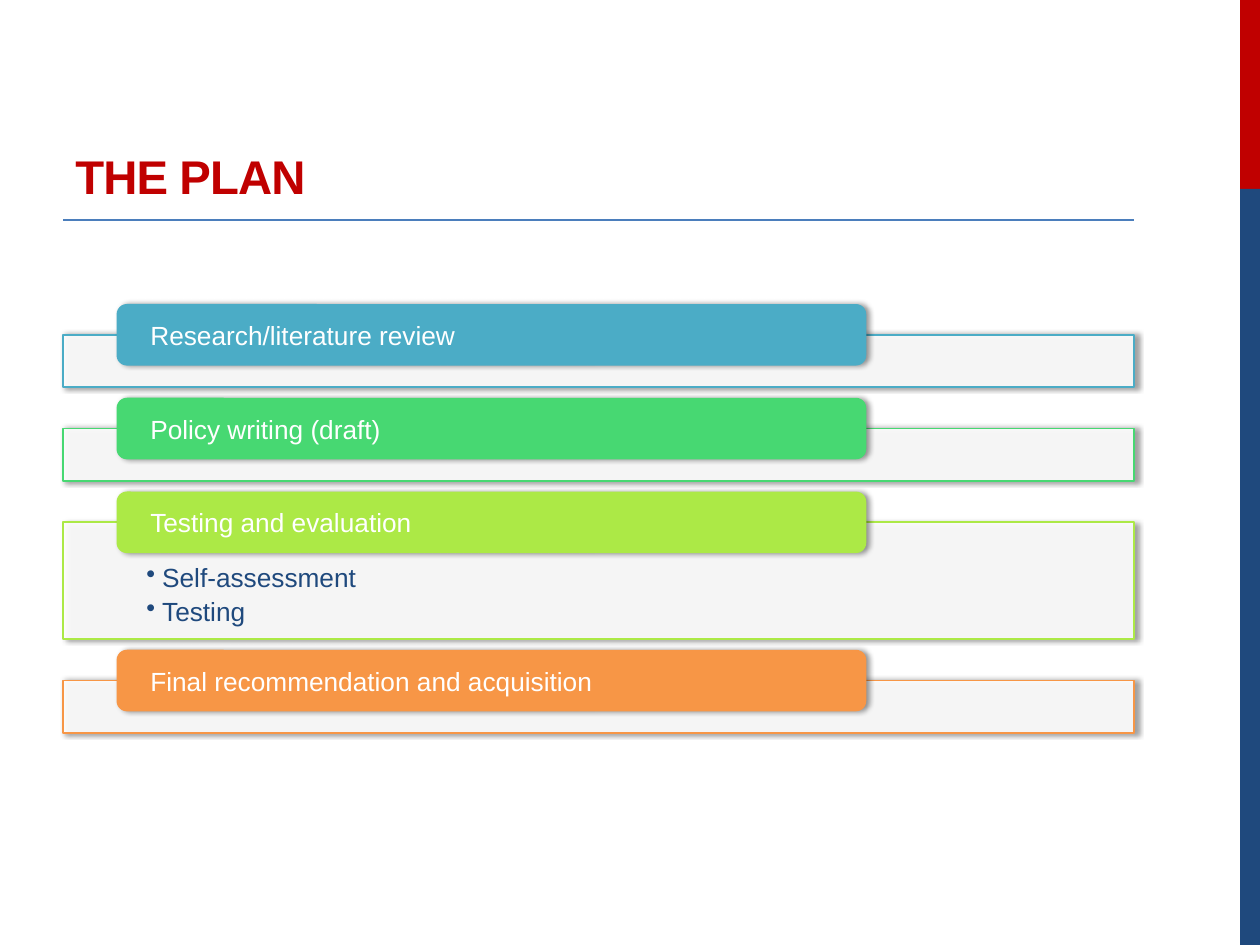
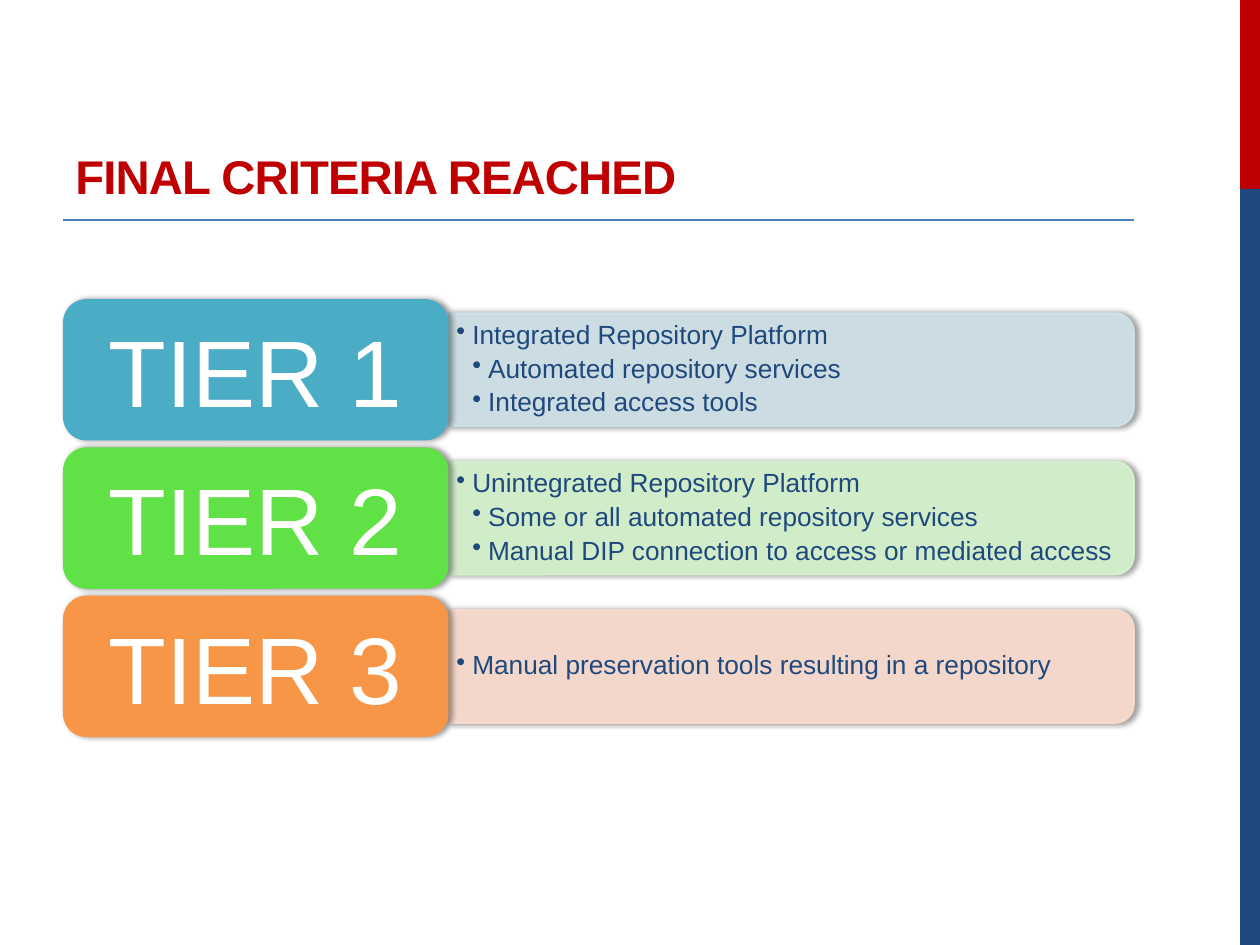
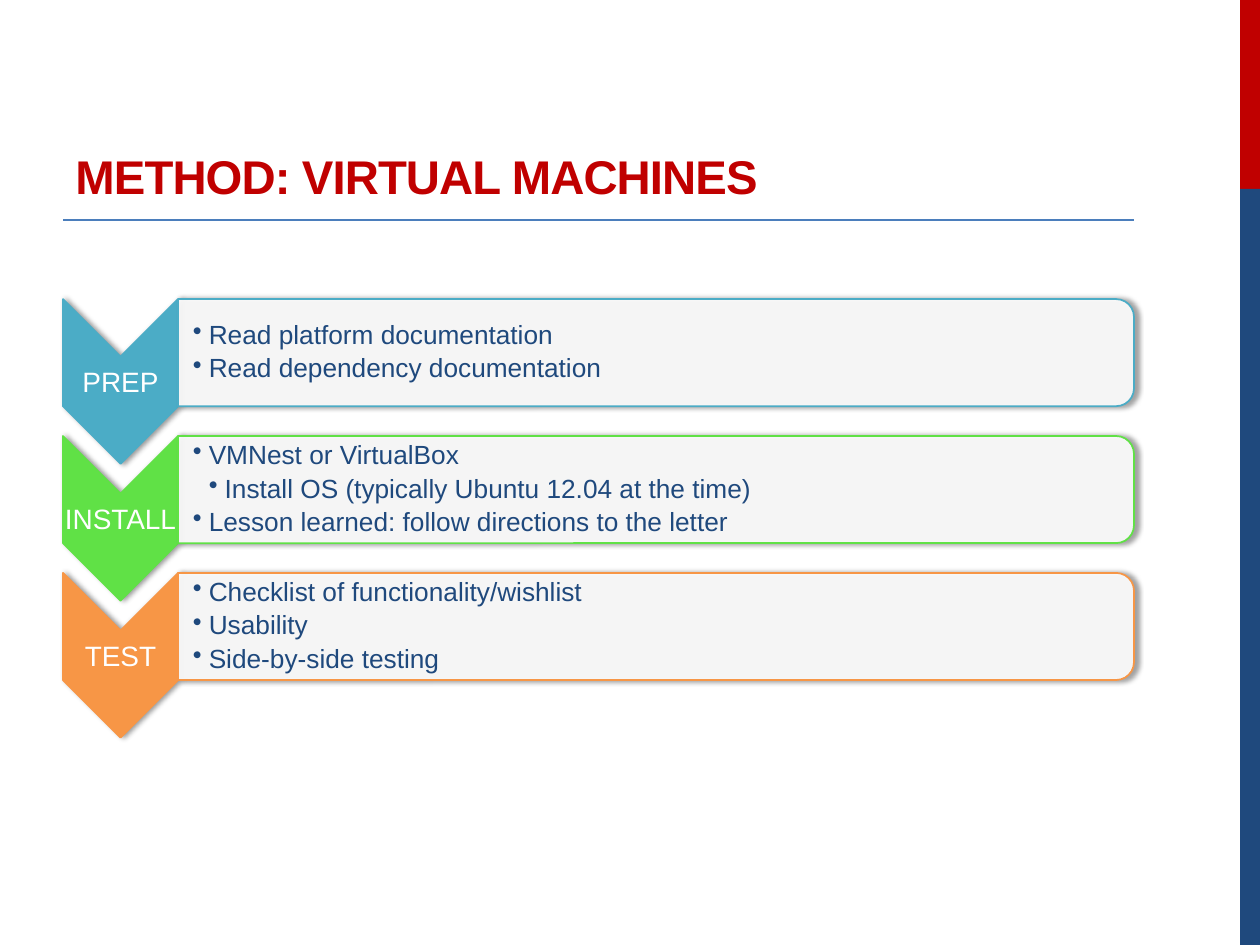
from lxml.etree import SubElement
from pptx import Presentation
from pptx.dml.color import RGBColor
from pptx.enum.shapes import MSO_CONNECTOR, MSO_SHAPE
from pptx.enum.text import MSO_ANCHOR, MSO_AUTO_SIZE, PP_ALIGN
from pptx.oxml.ns import qn
from pptx.util import Cm, Pt

COLORS = {
    "red": "C00000", "navy": "1F497D", "rule": "4B7EBC", "white": "FFFFFF",
    "teal": "4BACC6", "mint": "47D872", "lime": "ACE946", "green": "60E146", "orange": "F79646",
    "pale teal": "D0E3EA", "pale green": "D6F4CE", "pale orange": "FCDDCF",
}
FONT = "Arial"
SLIDE_WIDTH, SLIDE_HEIGHT = 25.4, 19.05
CONTENT_LEFT, CONTENT_WIDTH = 1.27, 21.59
BULLET_INDENT = 0.32

PLAN = [
    ("Research/literature review", "teal", []),
    ("Policy writing (draft)", "mint", []),
    ("Testing and evaluation", "lime", [(1, "Self-assessment"), (1, "Testing")]),
    ("Final recommendation and acquisition", "orange", []),
]
TIERS = [
    ("TIER 1", "teal", [
        (1, "Integrated Repository Platform"),
        (2, "Automated repository services"),
        (2, "Integrated access tools"),
    ]),
    ("TIER 2", "green", [
        (1, "Unintegrated Repository Platform"),
        (2, "Some or all automated repository services"),
        (2, "Manual DIP connection to access or mediated access"),
    ]),
    ("TIER 3", "orange", [(1, "Manual preservation tools resulting in a repository")]),
]
METHOD = [
    ("PREP", "teal", [(1, "Read platform documentation"), (1, "Read dependency documentation")]),
    ("INSTALL", "green", [
        (1, "VMNest or VirtualBox"),
        (2, "Install OS (typically Ubuntu 12.04 at the time)"),
        (1, "Lesson learned: follow directions to the letter"),
    ]),
    ("TEST", "orange", [
        (1, "Checklist of functionality/wishlist"),
        (1, "Usability"),
        (1, "Side-by-side testing"),
    ]),
]


def rgb(name):
    """Return the named colour."""
    return RGBColor.from_string(COLORS[name])


def set_font(paragraph, size, color):
    """Format a whole paragraph."""
    paragraph.font.name = FONT
    paragraph.font.size = Pt(size)
    paragraph.font.color.rgb = rgb(color)


def set_frame(shape, insets=(0, 0, 0, 0), anchor=MSO_ANCHOR.MIDDLE):
    """Prepare a wrapping text frame with insets left, top, right, bottom."""
    frame = shape.text_frame
    frame.word_wrap = True
    frame.auto_size = MSO_AUTO_SIZE.NONE
    frame.vertical_anchor = anchor
    frame.margin_left, frame.margin_top, frame.margin_right, frame.margin_bottom = map(Cm, insets)
    return frame


def write_label(shape, text, size, align, inset=0):
    """Write one white line in a shape."""
    paragraph = set_frame(shape, (inset, 0, inset, 0)).paragraphs[0]
    paragraph.text = text
    paragraph.alignment = align
    set_font(paragraph, size, "white")


def write_bullets(shape, items, insets, anchor=MSO_ANCHOR.MIDDLE):
    """Write bulleted (level, text) items in a shape."""
    frame = set_frame(shape, insets, anchor)
    for index, (level, text) in enumerate(items):
        paragraph = frame.add_paragraph() if index else frame.paragraphs[0]
        paragraph.text = text
        paragraph.alignment = PP_ALIGN.LEFT
        paragraph.level = level
        paragraph.line_spacing = 0.9
        paragraph.space_after = Pt(3)
        properties = paragraph._p.get_or_add_pPr()
        properties.set("marL", str(Cm(level * BULLET_INDENT)))
        properties.set("indent", str(-Cm(BULLET_INDENT)))
        SubElement(properties, qn("a:buChar"), char="•")
        set_font(paragraph, 15, "navy")


def add_box(slide, kind, left, top, width, height, fill, line=None, opacity=100, shadow=True, turned=False):
    """Add a filled shape covering the given box, turned a quarter clockwise on request."""
    if turned:
        left, top = left + (width - height) / 2, top + (height - width) / 2
        width, height = height, width
    shape = slide.shapes.add_shape(kind, Cm(left), Cm(top), Cm(width), Cm(height))
    shape.rotation = 90 if turned else 0
    shape.fill.solid()
    shape.fill.fore_color.rgb = rgb(fill)
    if line:
        shape.line.color.rgb = rgb(line)
        shape.line.width = Pt(1)
    else:
        shape.line.fill.background()
    properties = shape._element.spPr
    if opacity < 100:
        for color in list(properties.iter(qn("a:srgbClr"))):
            if color.get("val") == COLORS[fill]:
                SubElement(color, qn("a:alpha"), val=str(opacity * 1000))
    shape.shadow.inherit = False
    if shadow:
        outer = SubElement(
            properties.find(qn("a:effectLst")), qn("a:outerShdw"),
            blurRad=str(Pt(3.1)), dist=str(Pt(1.8)), dir="0", rotWithShape="0",
        )
        color = SubElement(outer, qn("a:srgbClr"), val="000000")
        SubElement(color, qn("a:alpha"), val="40000")
    return shape


def add_text_box(slide, left, top, width, height):
    """Add an empty text box."""
    return slide.shapes.add_textbox(Cm(left), Cm(top), Cm(width), Cm(height))


def add_frame(slide):
    """Add the side bands and the rule under the title."""
    band_left, band_split = 25.0, 3.81
    band_width = SLIDE_WIDTH - band_left
    for top, bottom, color in ((0, band_split, "red"), (band_split, SLIDE_HEIGHT, "navy")):
        add_box(slide, MSO_SHAPE.RECTANGLE, band_left, top, band_width, bottom - top, color, shadow=False)
    rule_top = Cm(4.44)
    rule = slide.shapes.add_connector(
        MSO_CONNECTOR.STRAIGHT, Cm(CONTENT_LEFT), rule_top, Cm(CONTENT_LEFT + CONTENT_WIDTH), rule_top
    )
    rule.line.color.rgb = rgb("rule")
    rule.line.width = Pt(1)
    SubElement(rule._element.spPr, qn("a:effectLst"))


def add_titled_slide(presentation, text):
    """Add a slide with the shared frame and a formatted title."""
    slide = presentation.slides.add_slide(presentation.slide_layouts[5])
    add_frame(slide)
    title = slide.shapes.title
    title.left, title.top, title.width, title.height = map(Cm, (CONTENT_LEFT, 0.43, CONTENT_WIDTH, 3.81))
    frame = set_frame(title, (0.25, 0.13, 0.25, 0.13), MSO_ANCHOR.BOTTOM)
    paragraph = frame.paragraphs[0]
    paragraph.text = text
    paragraph.alignment = PP_ALIGN.LEFT
    set_font(paragraph, 27, "red")
    paragraph.font.bold = True
    paragraph._p.pPr.find(qn("a:defRPr")).set("spc", "-50")
    return slide


def add_plan(slide, left, top, width):
    """Stack outlined panels, each with a coloured heading over its top edge."""
    heading_height, overhang, gap = 1.24, 0.62, 0.21
    for heading, color, items in PLAN:
        panel_height = 2.36 if items else 1.06
        panel = add_box(
            slide, MSO_SHAPE.RECTANGLE, left, top + overhang, width, panel_height, "white", color, 90
        )
        if items:
            write_bullets(panel, items, (1.68, 0.86, 1.68, 0.3), MSO_ANCHOR.TOP)
        tab = add_box(
            slide, MSO_SHAPE.ROUNDED_RECTANGLE, left + 0.05 * width, top, 0.7 * width, heading_height, color
        )
        write_label(tab, heading, 15, PP_ALIGN.LEFT, 0.62)
        top += overhang + panel_height + gap


def add_tiers(slide, left, top, width):
    """Stack rows of a large tier label and a pale panel of criteria."""
    label_width, label_height, pitch = 0.36 * width, 2.85, 2.99
    panel_left, panel_width, panel_height = left + label_width, width - label_width, 0.8 * label_height
    for index, (label, color, items) in enumerate(TIERS):
        row_top = top + index * pitch
        panel = (panel_left, row_top + 0.1 * label_height, panel_width, panel_height)
        pale = f"pale {color}"
        add_box(slide, MSO_SHAPE.ROUND_2_SAME_RECTANGLE, *panel, pale, pale, 90, turned=True)
        write_bullets(add_text_box(slide, *panel), items, (0.16, 0.08, 0.16, 0.08))
        block = add_box(
            slide, MSO_SHAPE.ROUNDED_RECTANGLE, left, row_top, label_width, label_height, color
        )
        write_label(block, label, 54, PP_ALIGN.CENTER)


def add_method(slide, left, top, width):
    """Stack rows of a downward chevron and an outlined panel of steps."""
    chevron_width, chevron_height, panel_height, pitch = 2.32, 3.32, 2.16, 2.76
    for index, (label, color, items) in enumerate(METHOD):
        row_top = top + index * pitch
        add_box(
            slide, MSO_SHAPE.CHEVRON, left, row_top, chevron_width, chevron_height, color, color, turned=True
        )
        point = chevron_width / 2
        label_box = add_text_box(slide, left, row_top + point, chevron_width, chevron_height - 2 * point)
        write_label(label_box, label, 16, PP_ALIGN.CENTER)
        panel = (left + chevron_width, row_top, width - chevron_width, panel_height)
        add_box(slide, MSO_SHAPE.ROUND_2_SAME_RECTANGLE, *panel, "white", color, 90, turned=True)
        write_bullets(add_text_box(slide, *panel), items, (0.3, 0.03, 0.16, 0.03))


def main():
    """Build the three slides."""
    presentation = Presentation()
    presentation.slide_width, presentation.slide_height = Cm(SLIDE_WIDTH), Cm(SLIDE_HEIGHT)
    for title, add_content, top in (
        ("THE PLAN", add_plan, 6.13),
        ("FINAL CRITERIA REACHED", add_tiers, 6.03),
        ("METHOD: VIRTUAL MACHINES", add_method, 6.03),
    ):
        add_content(add_titled_slide(presentation, title), CONTENT_LEFT, top, CONTENT_WIDTH)
    presentation.save("out.pptx")


if __name__ == "__main__":
    main()
